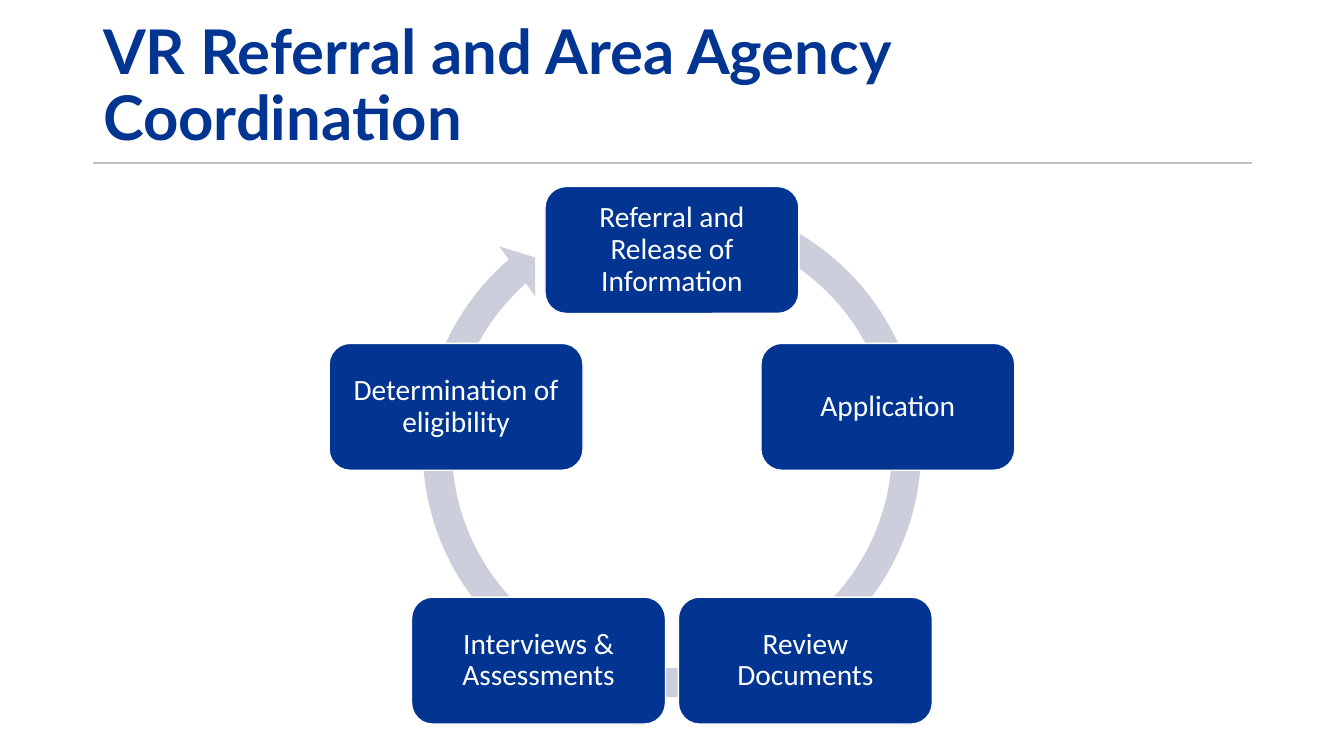
from dataclasses import dataclass
from math import cos, radians, sin

from lxml import etree
from pptx import Presentation
from pptx.dml.color import RGBColor
from pptx.enum.shapes import MSO_CONNECTOR, MSO_SHAPE
from pptx.enum.text import MSO_ANCHOR, MSO_AUTO_SIZE, PP_ALIGN
from pptx.oxml.ns import qn
from pptx.util import Pt

STRAIGHT = MSO_CONNECTOR.STRAIGHT
ROUNDED = MSO_SHAPE.ROUNDED_RECTANGLE
CIRCULAR_ARROW = MSO_SHAPE.CIRCULAR_ARROW
BOTTOM, MIDDLE = MSO_ANCHOR.BOTTOM, MSO_ANCHOR.MIDDLE
LEFT, CENTER = PP_ALIGN.LEFT, PP_ALIGN.CENTER

# Content
HEADING = "VR Referral and Area Agency Coordination"
STEPS = [
    "Referral and Release of Information",
    "Application",
    "Review Documents",
    "Interviews & Assessments",
    "Determination of eligibility",
]


@dataclass(frozen=True)
class Theme:
    navy: RGBColor = RGBColor(0x01, 0x35, 0x91)
    ring: RGBColor = RGBColor(0xCC, 0xCE, 0xDC)
    rule: RGBColor = RGBColor(0xBF, 0xBF, 0xBF)
    white: RGBColor = RGBColor(0xFF, 0xFF, 0xFF)
    heading_font: str = "Lato"
    step_font: str = "Calibri"
    heading_size: int = 44
    step_size: int = 21
    line_spacing: float = 0.9


THEME = Theme()

# Geometry in px
SLIDE_W, SLIDE_H = 1344, 756
HEADING_BOX = (93, 64, 1161, 95)
RULE_LEFT, RULE_RIGHT, RULE_Y = 93, 1252, 163
CENTER_X, CYCLE_Y, CYCLE_RADIUS = 672, 477, 227
STEP_W, STEP_H, STEP_INSET = 254, 127, 9
RING_Y, RING_SIZE = 448, 531
RING_ADJUSTMENTS = (0.055, 3.31, 137.27, 174.16, 0.058)


def px(length):
    return round(length * 914400 / 100.8)


def write(frame, text, font, size, color, align, anchor, bold=False):
    frame.word_wrap = True
    frame.auto_size = MSO_AUTO_SIZE.NONE
    frame.vertical_anchor = anchor
    paragraph = frame.paragraphs[0]
    paragraph.alignment = align
    paragraph.line_spacing = THEME.line_spacing
    run = paragraph.add_run()
    run.text = text
    run.font.name = font
    run.font.size = Pt(size)
    run.font.bold = bold
    run.font.color.rgb = color


def add_filled(slide, preset, center_x, center_y, width, height, color):
    shape = slide.shapes.add_shape(
        preset, px(center_x - width / 2), px(center_y - height / 2), px(width), px(height))
    shape.shadow.inherit = False
    shape.fill.solid()
    shape.fill.fore_color.rgb = color
    return shape


def add_heading(slide):
    heading = slide.shapes.title
    heading.left, heading.top, heading.width, heading.height = map(px, HEADING_BOX)
    write(heading.text_frame, HEADING, THEME.heading_font, THEME.heading_size,
          THEME.navy, LEFT, BOTTOM, bold=True)
    rule = slide.shapes.add_connector(
        STRAIGHT, px(RULE_LEFT), px(RULE_Y), px(RULE_RIGHT), px(RULE_Y))
    rule.line.color.rgb = THEME.rule
    rule.line.width = Pt(1)
    etree.SubElement(rule._element.spPr, qn("a:effectLst"))


def add_cycle(slide):
    # Ring arrow behind the steps
    ring = add_filled(slide, CIRCULAR_ARROW, CENTER_X, RING_Y, RING_SIZE, RING_SIZE, THEME.ring)
    ring.line.fill.background()
    for index, value in enumerate(RING_ADJUSTMENTS):
        ring.adjustments[index] = value

    # Steps spaced evenly clockwise from the top
    for index, label in enumerate(STEPS):
        angle = radians(index * 360 / len(STEPS))
        step = add_filled(slide, ROUNDED,
                          CENTER_X + CYCLE_RADIUS * sin(angle),
                          CYCLE_Y - CYCLE_RADIUS * cos(angle),
                          STEP_W, STEP_H, THEME.navy)
        step.line.color.rgb = THEME.white
        step.line.width = Pt(1)
        frame = step.text_frame
        frame.margin_left = frame.margin_right = px(STEP_INSET)
        frame.margin_top = frame.margin_bottom = px(STEP_INSET)
        write(frame, label, THEME.step_font, THEME.step_size, THEME.white, CENTER, MIDDLE)


def main():
    deck = Presentation()
    deck.slide_width, deck.slide_height = px(SLIDE_W), px(SLIDE_H)
    slide = deck.slides.add_slide(deck.slide_layouts[5])
    add_heading(slide)
    add_cycle(slide)
    deck.save("out.pptx")


if __name__ == "__main__":
    main()
